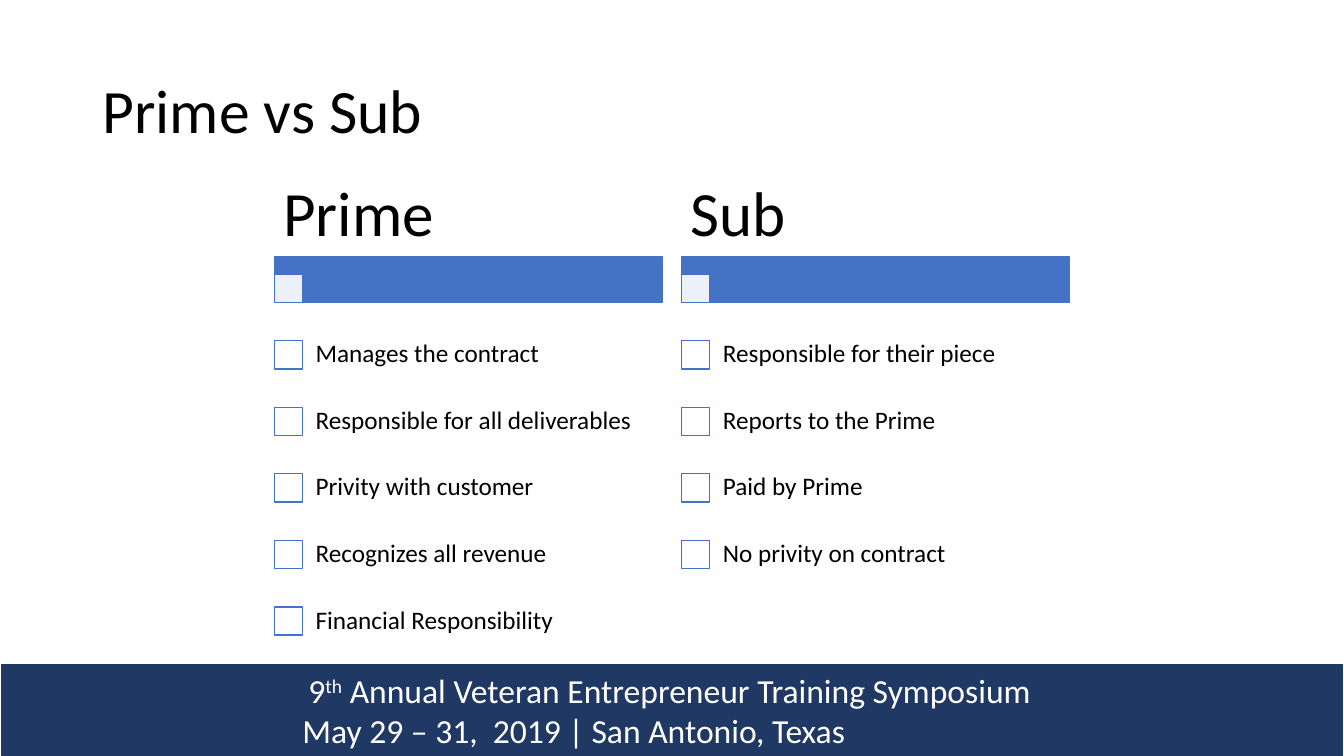
from dataclasses import dataclass

from lxml.etree import SubElement
from pptx import Presentation
from pptx.dml.color import RGBColor
from pptx.enum.shapes import MSO_SHAPE as Shape
from pptx.enum.text import MSO_ANCHOR as Anchor, PP_ALIGN as Align
from pptx.oxml.ns import qn
from pptx.util import Inches, Pt


@dataclass(frozen=True)
class Theme:
    """Colours, font and type sizes of the slide."""
    font: str = "Calibri"
    ink: str = "000000"
    paper: str = "FFFFFF"
    accent: str = "4472C4"
    navy: str = "203864"
    title: int = 44
    heading: int = 45
    item: int = 18
    footer: int = 24


THEME = Theme()
TITLE = "Prime vs Sub"
ROLES = {
    "Prime": [
        "Manages the contract",
        "Responsible for all deliverables",
        "Privity with customer",
        "Recognizes all revenue",
        "Financial Responsibility",
    ],
    "Sub": [
        "Responsible for their piece",
        "Reports to the Prime",
        "Paid by Prime",
        "No privity on contract",
    ],
}
FOOTER = [
    (2.94, [("9", 0), ("th", 30000), (" Annual Veteran Entrepreneur Training Symposium", 0)]),
    (2.88, [("May 29 – 31,  2019 | San Antonio, Texas", 0)]),
]


def add_run(paragraph, text, size, colour, baseline=0):
    """Append one styled run to a paragraph."""
    run = paragraph.add_run()
    run.text = text
    run.font.name = THEME.font
    run.font.size = Pt(size)
    run.font.color.rgb = RGBColor.from_string(colour)
    if baseline:
        run._r.get_or_add_rPr().set("baseline", str(baseline))


def add_box(shapes, left, top, width, height, fill, line, opacity=100):
    """Draw a flat rectangle with a thin outline."""
    box = shapes.add_shape(Shape.RECTANGLE, Inches(left), Inches(top), Inches(width), Inches(height))
    box.shadow.inherit = False
    box.fill.solid()
    box.fill.fore_color.rgb = RGBColor.from_string(fill)
    box.line.color.rgb = RGBColor.from_string(line)
    box.line.width = Pt(1)
    if opacity < 100:
        colour = box.fill._xPr.find(qn("a:solidFill"))[0]
        SubElement(colour, qn("a:alpha")).set("val", str(opacity * 1000))
    return box


def add_label(shapes, left, top, width, height, text, size, inset_x, inset_y):
    """Place one line of vertically centred text."""
    label = shapes.add_textbox(Inches(left), Inches(top), Inches(width), Inches(height))
    frame = label.text_frame
    frame.word_wrap = True
    frame.vertical_anchor = Anchor.MIDDLE
    frame.margin_left = frame.margin_right = Inches(inset_x)
    frame.margin_top = frame.margin_bottom = Inches(inset_y)
    paragraph = frame.paragraphs[0]
    paragraph.line_spacing = 0.9
    add_run(paragraph, text, size, THEME.ink)


def add_footer(shapes, left, top, width, height):
    """Draw the event banner with its two indented lines."""
    frame = add_box(shapes, left, top, width, height, THEME.navy, THEME.navy).text_frame
    frame.word_wrap = True
    frame.vertical_anchor = Anchor.MIDDLE
    for number, (indent, runs) in enumerate(FOOTER):
        paragraph = frame.add_paragraph() if number else frame.paragraphs[0]
        paragraph.alignment = Align.LEFT
        properties = paragraph._p.get_or_add_pPr()
        properties.set("marL", str(Inches(indent)))
        properties.set("indent", "0")
        for text, baseline in runs:
            add_run(paragraph, text, THEME.footer, THEME.paper, baseline)


def add_role(shapes, left, top, width, heading, duties):
    """Build one role column: heading, bar and checklist."""
    heading_height, bar_height, check, row = 0.81, 0.45, 0.28, 0.66
    bar_top = top + heading_height
    first_check = bar_top + 0.17
    add_box(shapes, left, bar_top, width, bar_height, THEME.accent, THEME.accent)
    add_box(shapes, left, first_check, check, check, THEME.paper, THEME.accent, opacity=90)
    add_label(shapes, left, top, width, heading_height, heading, THEME.heading, 0.09, 0.06)
    for number, duty in enumerate(duties, start=1):
        check_top = first_check + number * row
        label_top = check_top + (check - row) / 2
        add_box(shapes, left, check_top, check, check, THEME.paper, THEME.accent)
        add_label(shapes, left + 0.27, label_top, width - 0.27, row, duty, THEME.item, 0.14, 0.14)


def main():
    """Assemble and save the slide."""
    deck = Presentation()
    deck.slide_width, deck.slide_height = Inches(13.33), Inches(7.5)
    shapes = deck.slides.add_slide(deck.slide_layouts[6]).shapes
    add_footer(shapes, 0.02, 6.59, 13.29, 0.91)
    add_label(shapes, 0.92, 0.4, 11.5, 1.45, TITLE, THEME.title, 0.1, 0.05)
    comparison = shapes.add_group_shape().shapes
    for column, (heading, duties) in enumerate(ROLES.items()):
        add_role(comparison, 2.72 + column * 4.04, 1.74, 3.85, heading, duties)
    deck.save("out.pptx")


if __name__ == "__main__":
    main()
